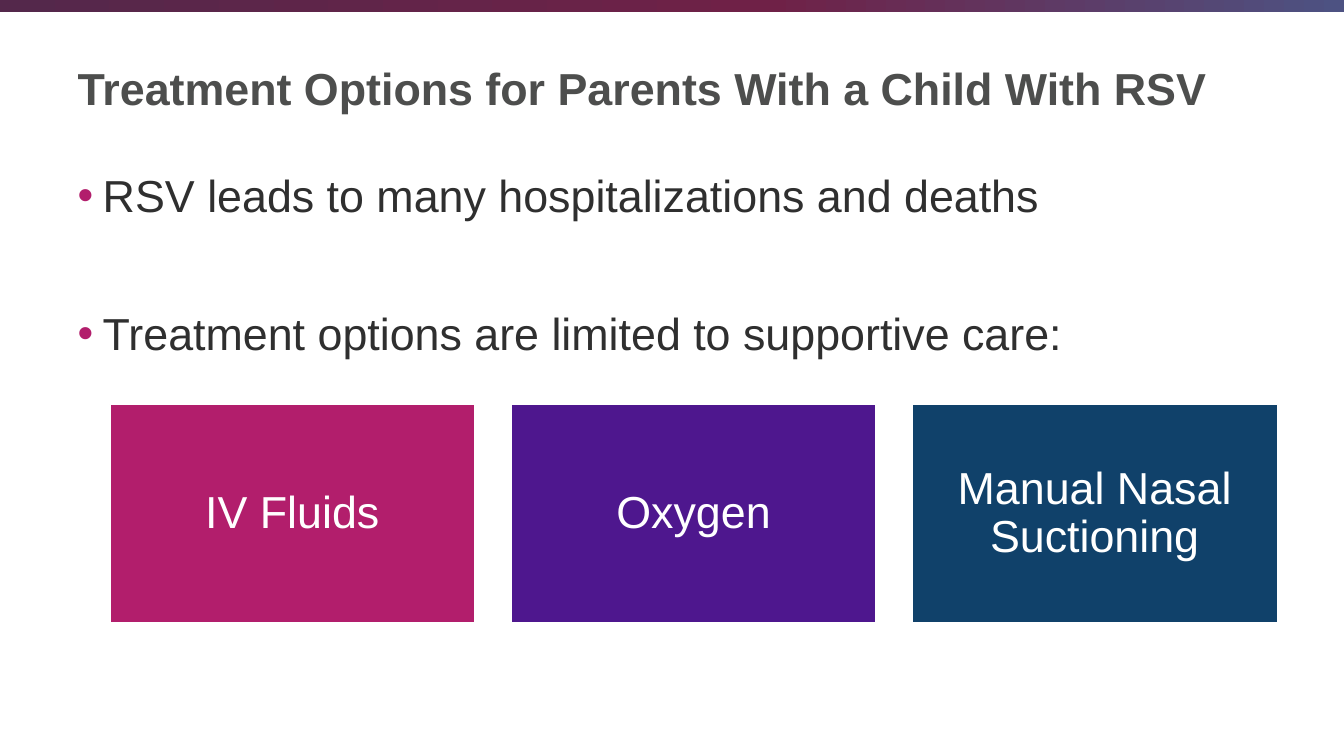
from lxml import etree
from pptx import Presentation
from pptx.dml.color import RGBColor
from pptx.enum.shapes import MSO_SHAPE
from pptx.enum.text import MSO_ANCHOR, MSO_AUTO_SIZE, PP_ALIGN
from pptx.oxml import parse_xml
from pptx.oxml.ns import nsdecls, qn
from pptx.util import Cm, Pt

RECT = MSO_SHAPE.RECTANGLE
MIDDLE, TOP = MSO_ANCHOR.MIDDLE, MSO_ANCHOR.TOP
LEFT, CENTER = PP_ALIGN.LEFT, PP_ALIGN.CENTER
NO_FIT = MSO_AUTO_SIZE.NONE

WHITE = RGBColor(0xFF, 0xFF, 0xFF)
TITLE_GREY = RGBColor(0x4D, 0x4E, 0x4D)
TEXT_GREY = RGBColor(0x2F, 0x2F, 0x2F)
MAGENTA = RGBColor(0xB2, 0x1E, 0x6C)
VIOLET = RGBColor(0x4E, 0x17, 0x8E)
NAVY = RGBColor(0x10, 0x41, 0x6A)
BAND_STOPS = [
    (0, RGBColor(0x54, 0x28, 0x4B)),
    (57, RGBColor(0x6F, 0x21, 0x47)),
    (100, RGBColor(0x4D, 0x52, 0x82)),
]

SLIDE_W, SLIDE_H = Cm(33.87), Cm(19.05)
MARGIN, CONTENT_W = Cm(1.7), Cm(29.85)
BOX_LEFT, BOX_TOP = Cm(2.77), Cm(10.19)
BOX_W, BOX_H, BOX_PITCH = Cm(9.2), Cm(5.51), Cm(10.11)
TREATMENTS = [
    ("IV Fluids", MAGENTA),
    ("Oxygen", VIOLET),
    ("Manual Nasal Suctioning", NAVY),
]


class Deck:
    font = "Arial"
    size = Pt(32)

    def __init__(self, prs):
        self.slide = prs.slides.add_slide(prs.slide_layouts[1])

    def run(self, p, text, color, bold=False):
        r = p.add_run()
        r.text = text
        r.font.name, r.font.size = self.font, self.size
        r.font.bold, r.font.color.rgb = bold, color

    def place(self, sp, top, height, anchor):
        """Move a placeholder into the content column and return its text frame."""
        sp.left, sp.top, sp.width, sp.height = MARGIN, top, CONTENT_W, height
        tf = sp.text_frame
        tf.auto_size, tf.word_wrap, tf.vertical_anchor = NO_FIT, True, anchor
        return tf

    def title(self, text):
        tf = self.place(self.slide.shapes.title, Cm(0.56), Cm(3.3), MIDDLE)
        p = tf.paragraphs[0]
        p.alignment = LEFT
        self.run(p, text, TITLE_GREY, bold=True)

    def bullets(self, items, gap):
        tf = self.place(self.slide.placeholders[1], Cm(4.11), Cm(13.11), TOP)
        for i, text in enumerate(items):
            p = tf.paragraphs[0] if i == 0 else tf.add_paragraph()
            p.line_spacing = 1.0
            p.space_before = gap if i else Pt(0)
            pPr = p._p.get_or_add_pPr()
            pPr.set("marL", str(Cm(0.635)))
            pPr.set("indent", str(Cm(-0.635)))
            color = etree.SubElement(pPr, qn("a:buClr"))
            etree.SubElement(color, qn("a:srgbClr"), val=str(MAGENTA))
            etree.SubElement(pPr, qn("a:buFont"), typeface=self.font)
            etree.SubElement(pPr, qn("a:buChar"), char="•")
            self.run(p, text, TEXT_GREY)

    def band(self, height, stops):
        """Add a horizontal gradient strip across the top edge."""
        sp = self.slide.shapes.add_shape(RECT, 0, 0, SLIDE_W, height)
        sp.shadow.inherit = False
        sp.line.fill.background()
        stop_xml = "".join(
            f'<a:gs pos="{pos * 1000}"><a:srgbClr val="{color}"/></a:gs>'
            for pos, color in stops
        )
        sp._element.spPr.find(qn("a:prstGeom")).addnext(parse_xml(
            f'<a:gradFill {nsdecls("a")} rotWithShape="1"><a:gsLst>{stop_xml}'
            '</a:gsLst><a:lin ang="0" scaled="0"/></a:gradFill>'
        ))

    def box(self, left, text, color):
        sp = self.slide.shapes.add_shape(RECT, left, BOX_TOP, BOX_W, BOX_H)
        sp.shadow.inherit = False
        sp.fill.solid()
        sp.fill.fore_color.rgb = color
        sp.line.color.rgb, sp.line.width = WHITE, Pt(1)
        tf = sp.text_frame
        tf.word_wrap, tf.vertical_anchor = True, MIDDLE
        tf.margin_left = tf.margin_right = Cm(0.33)
        tf.margin_top = tf.margin_bottom = Cm(0.33)
        p = tf.paragraphs[0]
        p.alignment, p.line_spacing = CENTER, 0.9
        self.run(p, text, WHITE)


def main():
    prs = Presentation()
    prs.slide_width, prs.slide_height = SLIDE_W, SLIDE_H
    deck = Deck(prs)
    deck.band(Cm(0.3), BAND_STOPS)
    deck.title("Treatment Options for Parents With a Child With RSV")
    deck.bullets([
        "RSV leads to many hospitalizations and deaths",
        "Treatment options are limited to supportive care:",
    ], gap=Pt(60))
    for i, (text, color) in enumerate(TREATMENTS):
        deck.box(BOX_LEFT + i * BOX_PITCH, text, color)
    prs.save("out.pptx")


if __name__ == "__main__":
    main()
